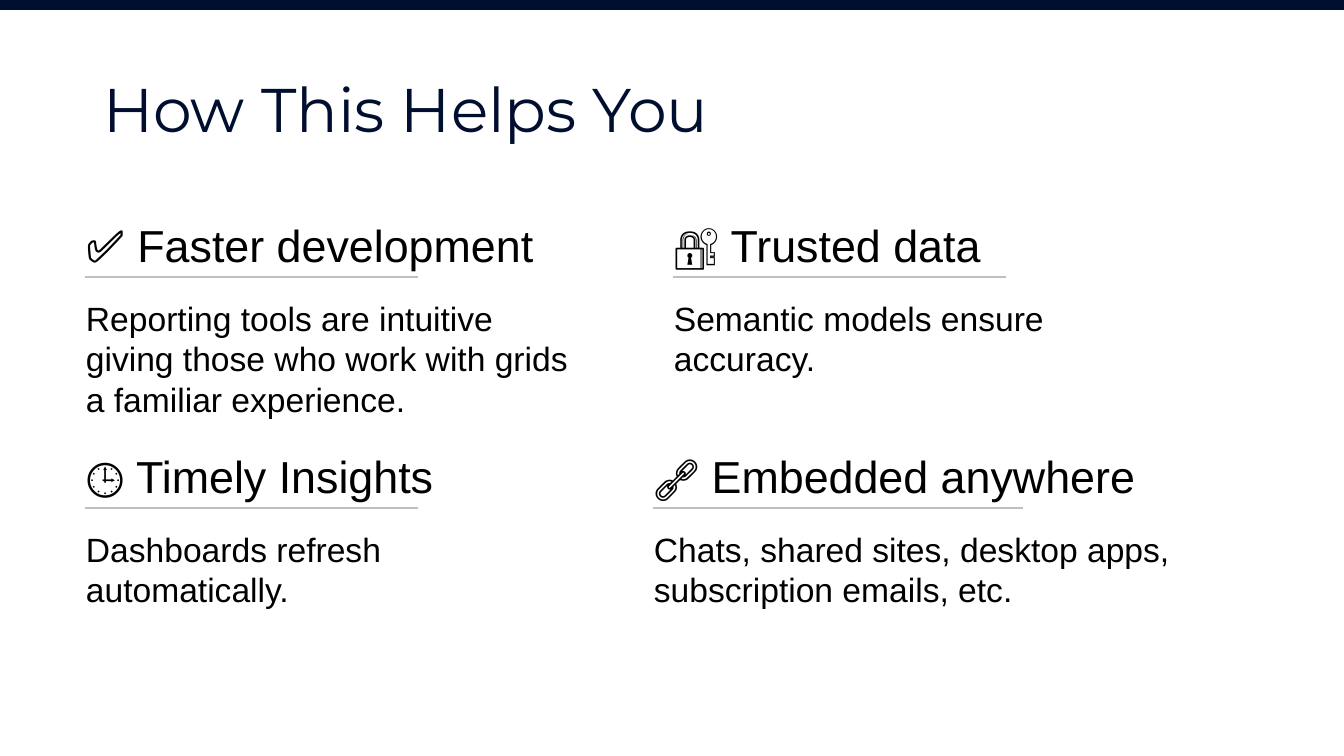
"""Build the slide on how the reporting tools help."""
from pptx import Presentation
from pptx.dml.color import RGBColor
from pptx.enum.shapes import MSO_CONNECTOR as Link, MSO_SHAPE as Form
from pptx.enum.text import MSO_ANCHOR as Anchor, MSO_AUTO_SIZE as Fit, PP_ALIGN as Align
from pptx.oxml.ns import qn
from pptx.util import Emu, Pt
from lxml.etree import SubElement

NAVY = RGBColor(0x00, 0x0E, 0x2F)
BLACK = RGBColor(0x00, 0x00, 0x00)
GREY = RGBColor(0xBF, 0xBF, 0xBF)
SCALE = 914400 / 100.8
WIDE, HIGH = 1344, 756


def px(*nums):
    return [Emu(round(num * SCALE)) for num in nums]


def write(shape, text, size=24, face="Arial", color=BLACK, anchor=Anchor.TOP,
          fit=Fit.SHAPE_TO_FIT_TEXT, space=None):
    frame = shape.text_frame
    frame.word_wrap = True
    frame.auto_size = fit
    frame.vertical_anchor = anchor
    para = frame.paragraphs[0]
    para.alignment = Align.LEFT
    para.line_spacing = space
    run = para.add_run()
    run.text = text
    run.font.size = Pt(size)
    run.font.name = face
    run.font.color.rgb = color


class Deck:
    def __init__(self):
        self.show = Presentation()
        self.show.slide_width, self.show.slide_height = px(WIDE, HIGH)
        self.slide = self.show.slides.add_slide(self.show.slide_layouts[5])

    def bar(self, high):
        bar = self.slide.shapes.add_shape(Form.RECTANGLE, *px(0, 0, WIDE, high))
        bar.shadow.inherit = False
        bar.fill.solid()
        bar.fill.fore_color.rgb = NAVY
        bar.line.fill.background()

    def title(self, text, left, top, wide, high):
        title = self.slide.shapes.title
        title.left, title.top, title.width, title.height = px(left, top, wide, high)
        write(title, text, size=44, face="Montserrat", color=NAVY,
              anchor=Anchor.MIDDLE, fit=Fit.NONE, space=0.9)

    def box(self, group, text, left, top, wide, high, **style):
        write(group.shapes.add_textbox(*px(left, top, wide, high)), text, **style)

    def rule(self, group, left, top, wide):
        line = group.shapes.add_connector(
            Link.STRAIGHT, *px(left, top, left + wide, top))
        line.line.color.rgb = GREY
        line.line.width = Pt(1.5)
        SubElement(line._element.spPr, qn("a:effectLst"))

    def point(self, head, body, left, top, lines, wide=547, text=505, rule=333):
        group = self.slide.shapes.add_group_shape()
        self.box(group, head, left, top, wide, 64, size=32)
        self.box(group, body, left, top + 80, text, 10 + 40 * lines)
        self.rule(group, left + 9, top + 64, rule)


def main():
    deck = Deck()
    deck.bar(10)
    deck.title("How This Helps You", 93, 40, 1159, 146)
    upper, lower = 213, 444
    deck.point("✅ Faster development",
               "Reporting tools are intuitive giving those who work with "
               "grids a familiar experience.", 76, upper, 3)
    deck.point("🔐 Trusted data", "Semantic models ensure accuracy.", 664, upper, 2)
    deck.point("🕒 Timely Insights", "Dashboards refresh automatically.", 76, lower, 2)
    deck.point("🔗 Embedded anywhere",
               "Chats, shared sites, desktop apps, subscription emails, etc.",
               644, lower, 2, wide=608, text=608, rule=370)
    deck.show.save("out.pptx")


if __name__ == "__main__":
    main()
